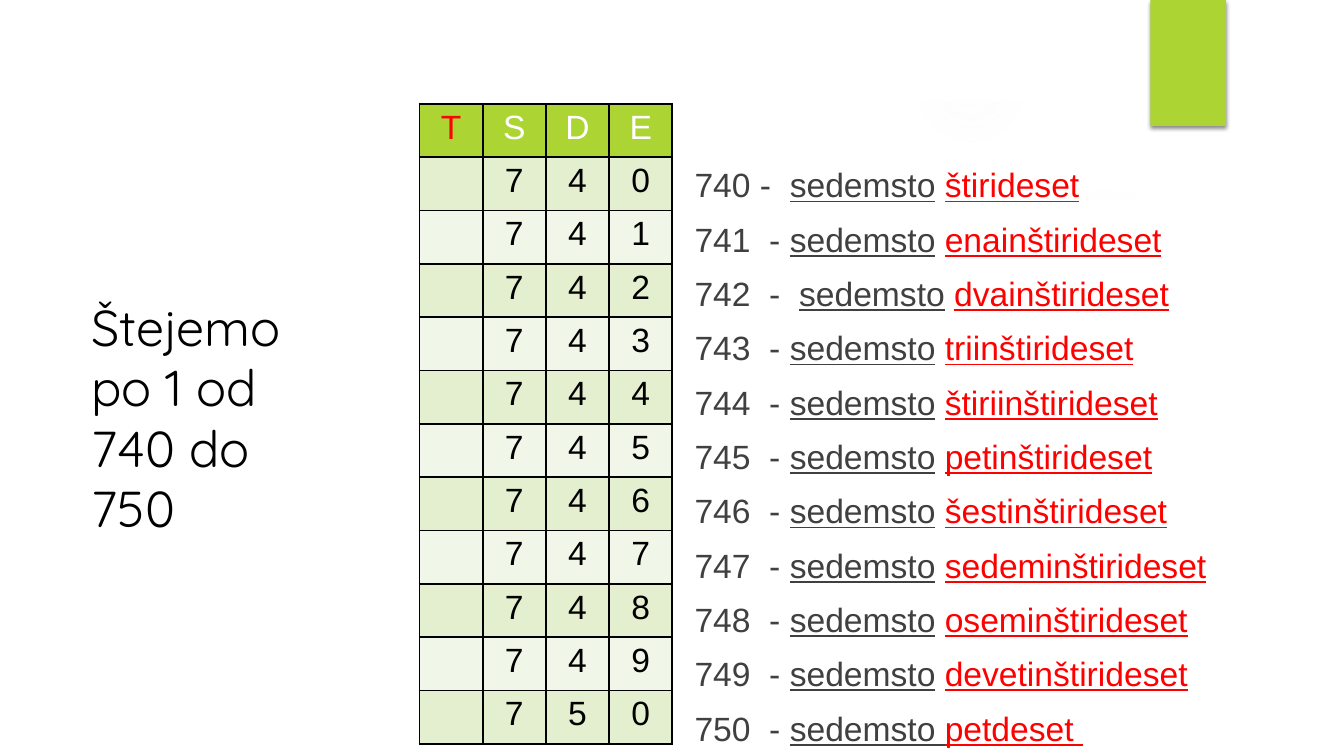
from dataclasses import dataclass

from lxml import etree
from pptx import Presentation
from pptx.dml.color import RGBColor
from pptx.enum.shapes import MSO_SHAPE
from pptx.enum.text import MSO_ANCHOR, PP_ALIGN
from pptx.oxml import parse_xml
from pptx.oxml.ns import nsdecls, qn
from pptx.util import Inches, Pt

RECT = MSO_SHAPE.RECTANGLE
OVAL = MSO_SHAPE.OVAL
MIDDLE = MSO_ANCHOR.MIDDLE
CENTER = PP_ALIGN.CENTER


@dataclass(frozen=True)
class Theme:
    """Colours, fonts and type sizes of the slide."""
    green: str = "ACD433"
    band_dark: str = "E3EFCE"
    band_light: str = "F1F7E8"
    glow: str = "F7F7F7"
    red: str = "FF0000"
    grey: str = "404040"
    black: str = "000000"
    white: str = "FFFFFF"
    title_font: str = "Quicksand"
    body_font: str = "Arial"
    title_size: int = 36
    body_size: int = 24
    border: float = 1.5


THEME = Theme()
TITLE = "Štejemo po 1 od 740 do 750"
PLACES = "TSDE"
NUMBERS = range(740, 751)
HUNDREDS = "sedemsto"
WORDS = [
    ("740 -  ", "štirideset"),
    ("741  - ", "enainštirideset"),
    ("742  -  ", "dvainštirideset"),
    ("743  - ", "triinštirideset"),
    ("744  - ", "štiriinštirideset"),
    ("745  - ", "petinštirideset"),
    ("746  - ", "šestinštirideset"),
    ("747  - ", "sedeminštirideset"),
    ("748  - ", "oseminštirideset"),
    ("749  - ", "devetinštirideset"),
    ("750  - ", "petdeset "),
]
GLOWS = [
    (0, 2.92, 4.58, ((0, 11), (36, 10), (75, 0))),
    (0, 3.17, 2.58, ((0, 8), (36, 8), (72, 0))),
    (9.41, 1.83, 3.08, ((0, 7), (36, 6), (69, 0))),
    (8.75, 0, 1.75, ((0, 14), (36, 7), (73, 0))),
    (9.41, 6.42, 1.08, ((0, 14), (36, 7), (66, 0))),
]
PANEL_CURVE = [
    (0, 0), (1.09, 0.14), (2.33, 0.26), (3.94, 0.37), (5.57, 0.43),
    (7.1, 0.43), (8.71, 0.38), (10.1, 0.28), (11.5, 0.13), (12.33, 0),
]


def add_run(p, text, color, font=THEME.body_font, size=THEME.body_size, underline=False):
    """Append one formatted run to a paragraph."""
    r = p.add_run()
    r.text = text
    r.font.name = font
    r.font.size = Pt(size)
    r.font.bold = False
    r.font.underline = underline
    r.font.color.rgb = RGBColor.from_string(color)


def add_text_frame(s, box):
    """Add a wrapping text box and return its frame."""
    tf = s.shapes.add_textbox(*map(Inches, box)).text_frame
    tf.word_wrap = True
    return tf


def paint(sp, color):
    """Fill a shape with one colour, without line or shadow."""
    sp.shadow.inherit = False
    sp.fill.solid()
    sp.fill.fore_color.rgb = RGBColor.from_string(color)
    sp.line.fill.background()


def add_glow(s, left, top, size, stops):
    """Draw a round glow that fades towards its edge."""
    sp = s.shapes.add_shape(OVAL, *map(Inches, (left, top, size, size)))
    paint(sp, THEME.glow)
    stop_xml = "".join(
        f'<a:gs pos="{pos * 1000}"><a:srgbClr val="{THEME.glow}">'
        f'<a:alpha val="{alpha * 1000}"/></a:srgbClr></a:gs>' for pos, alpha in stops)
    gradient = parse_xml(
        f'<a:gradFill {nsdecls("a")} rotWithShape="1"><a:gsLst>{stop_xml}</a:gsLst>'
        '<a:path path="circle"><a:fillToRect l="50000" t="50000" r="50000" b="50000"/>'
        '</a:path></a:gradFill>')
    sp_pr = sp._element.spPr
    sp_pr.replace(sp_pr.find(qn("a:solidFill")), gradient)


def add_outline(s, *contours):
    """Draw a white shape from closed contours."""
    builder = None
    for start, *rest in contours:
        if builder is None:
            builder = s.shapes.build_freeform(*start, scale=Inches(1))
        else:
            builder.move_to(*start)
        builder.add_line_segments(rest, close=True)
    paint(builder.convert_to_shape(), THEME.white)


def add_backdrop(s, box, margin):
    """Lay the glows under the curved panel and the white frame."""
    left, top, width, height = box
    right, bottom = left + width, top + height
    for glow in GLOWS:
        add_glow(s, *glow)
    panel_left, panel_top, panel_bottom = left + 0.5, top + 2.04, bottom - 0.5
    curve = [(panel_left + x, panel_top + y) for x, y in PANEL_CURVE]
    add_outline(s, curve + [(curve[-1][0], panel_bottom), (panel_left, panel_bottom)])
    outer = [(left, top), (left, bottom), (right, bottom), (right, top)]
    inner = [(left + margin, top + margin), (right - margin, top + margin),
             (right - margin, bottom - margin), (left + margin, bottom - margin)]
    add_outline(s, outer, inner)


def add_tag(s, box):
    """Draw the green tag with its soft shadow."""
    sp = s.shapes.add_shape(RECT, *map(Inches, box))
    paint(sp, THEME.green)
    sp._element.spPr.find(qn("a:effectLst")).append(parse_xml(
        f'<a:outerShdw {nsdecls("a")} blurRad="{Pt(3)}" dist="{Pt(2)}" dir="5400000" '
        f'rotWithShape="0"><a:srgbClr val="{THEME.black}"><a:alpha val="45000"/>'
        '</a:srgbClr></a:outerShdw>'))


def add_title(s, box):
    """Write the slide title, centred on its box."""
    tf = add_text_frame(s, box)
    tf.vertical_anchor = MIDDLE
    add_run(tf.paragraphs[0], TITLE, THEME.black, THEME.title_font, THEME.title_size)


def add_number_words(s, box):
    """List each number with its name in words."""
    tf = add_text_frame(s, box)
    for i, (prefix, word) in enumerate(WORDS):
        p = tf.add_paragraph() if i else tf.paragraphs[0]
        if i:
            p.space_before = Pt(10)
        add_run(p, prefix, THEME.grey)
        add_run(p, HUNDREDS, THEME.grey, underline=True)
        add_run(p, " ", THEME.grey, underline=i == len(WORDS) - 1)
        add_run(p, word, THEME.red, underline=True)


def set_borders(cell):
    """Give a table cell a solid line on each side."""
    tc_pr = cell._tc.get_or_add_tcPr()
    for side in ("lnL", "lnR", "lnT", "lnB"):
        ln = etree.SubElement(tc_pr, qn(f"a:{side}"), w=str(Pt(THEME.border)))
        fill = etree.SubElement(ln, qn("a:solidFill"))
        etree.SubElement(fill, qn("a:srgbClr"), val=THEME.black)


def add_place_table(s, box):
    """Build the place-value table of the counted numbers."""
    rows = [PLACES] + [f"{n:>4}" for n in NUMBERS]
    table = s.shapes.add_table(len(rows), len(PLACES), *map(Inches, box)).table
    table.first_row = table.horz_banding = False
    for i, row in enumerate(rows):
        band = THEME.band_dark if i % 2 else THEME.band_light
        for j, text in enumerate(row):
            cell = table.cell(i, j)
            set_borders(cell)
            cell.fill.solid()
            cell.fill.fore_color.rgb = RGBColor.from_string(band if i else THEME.green)
            if text.strip():
                p = cell.text_frame.paragraphs[0]
                p.alignment = CENTER
                head = THEME.white if j else THEME.red
                add_run(p, text, THEME.black if i else head)


def main():
    """Build and save the presentation."""
    prs = Presentation()
    prs.slide_width, prs.slide_height = Inches(13.33), Inches(7.5)
    s = prs.slides.add_slide(prs.slide_layouts[6])
    add_backdrop(s, (0, 0, 13.33, 7.5), 0.52)
    add_tag(s, (11.41, 0, 0.75, 1.25))
    add_number_words(s, (6.79, 1.58, 6.5, 5.9))
    add_title(s, (0.81, 3.75, 2.34, 0.77))
    add_place_table(s, (4.16, 1.03, 2.51, 6.35))
    prs.save("out.pptx")


if __name__ == "__main__":
    main()
